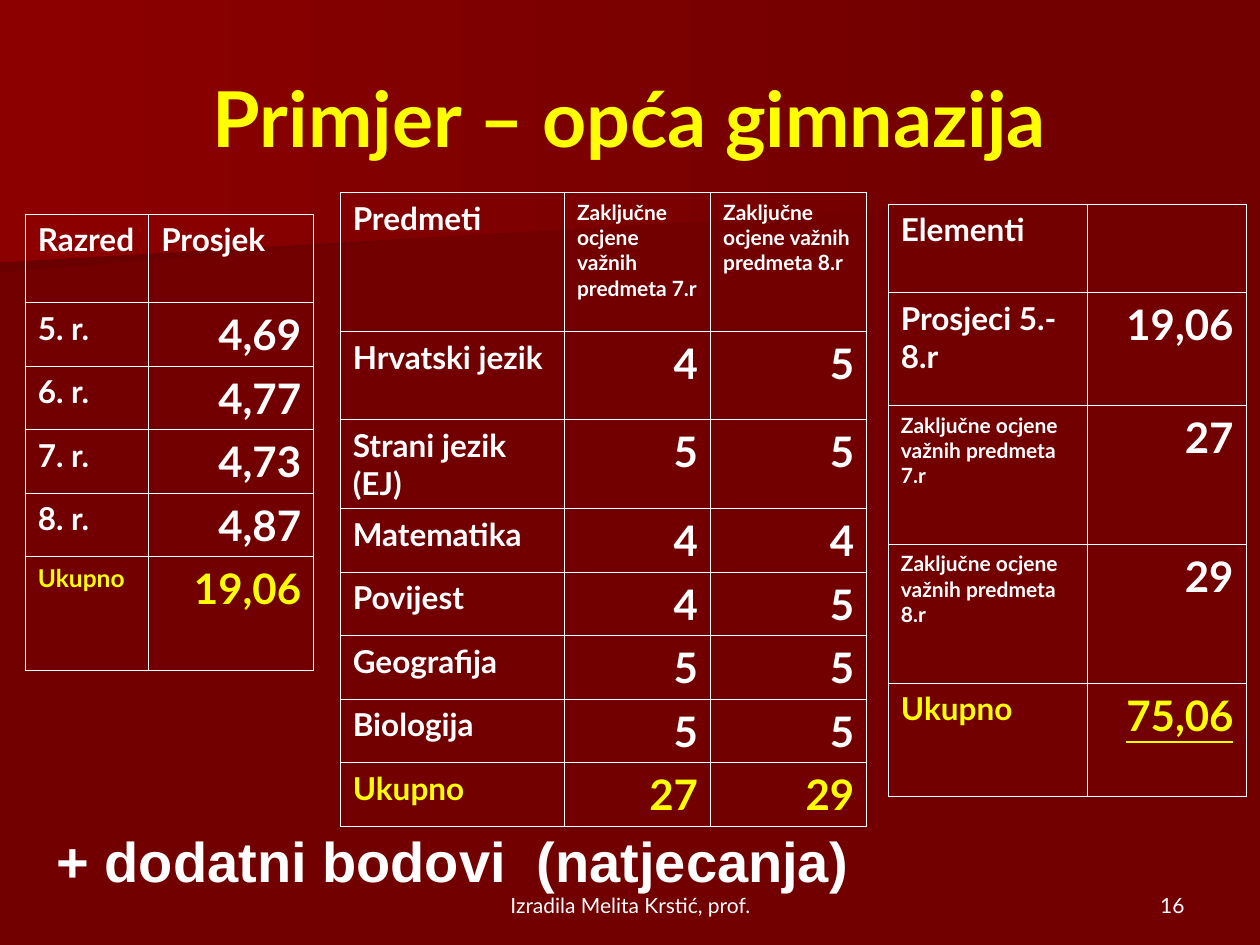
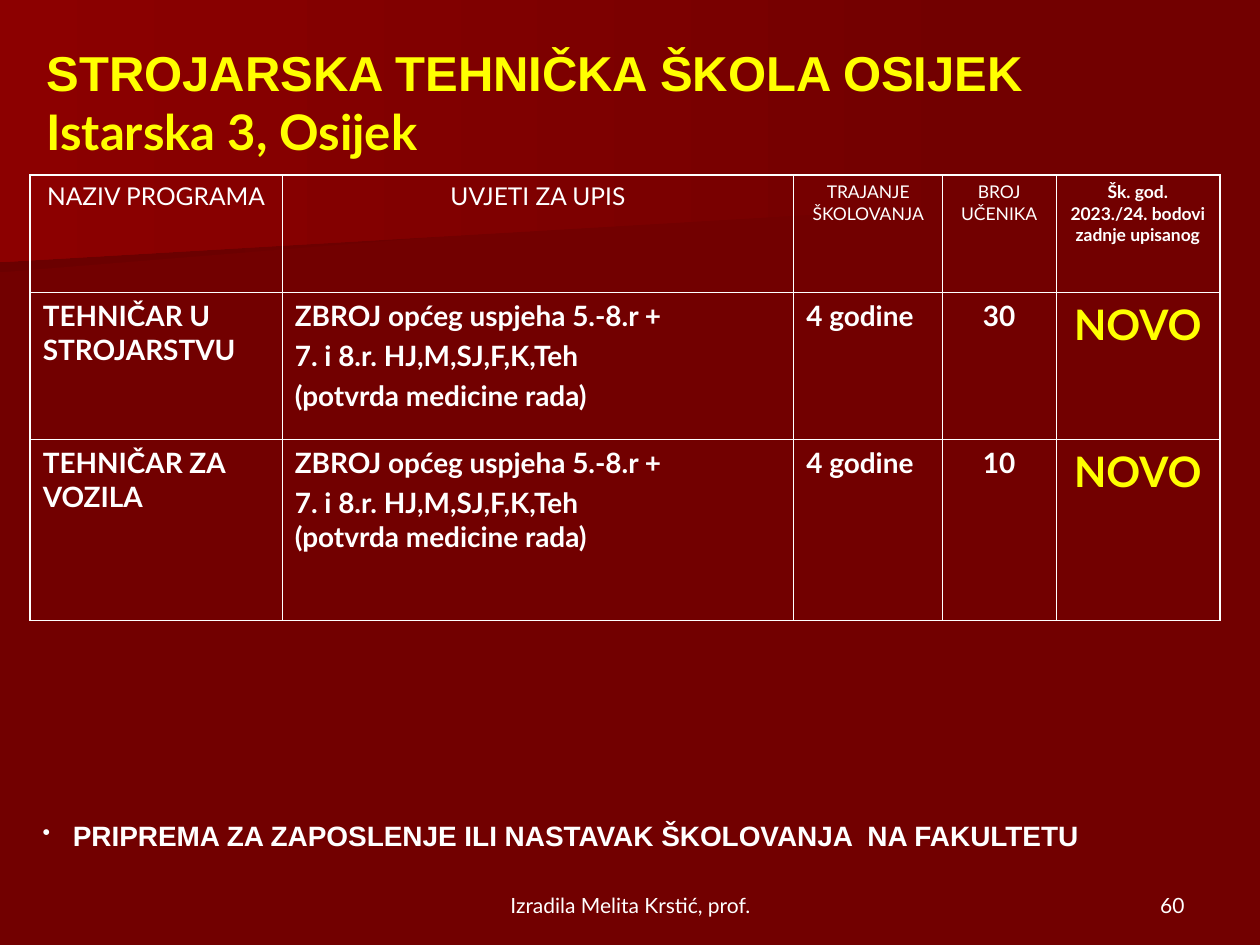
"""Builds two slides on enrolment points for Croatian secondary schools."""
from lxml import etree
from pptx import Presentation
from pptx.dml.color import RGBColor
from pptx.enum.text import MSO_ANCHOR, PP_ALIGN
from pptx.oxml.ns import qn
from pptx.util import Inches, Pt

LEFT, CENTER, RIGHT = PP_ALIGN.LEFT, PP_ALIGN.CENTER, PP_ALIGN.RIGHT
TOP, MIDDLE, BOTTOM = MSO_ANCHOR.TOP, MSO_ANCHOR.MIDDLE, MSO_ANCHOR.BOTTOM

COLORS = {
    "ground": "720000",
    "shade": "6B0000",
    "glow": "8C0000",
    "text": "FFFFFF",
    "accent": "FFFF00",
}
BODY_FONT, PLAIN_FONT = "Lato", "Arial"
THIN, THICK = 0.45, 1.08
BANDS = [
    ("shade", [(7.78, 1.53), (0, 2.16), (0, 1.01), (7.79, 1.01), (7.78, 1.28)]),
    ("glow", [(7.91, 1.62), (0, 2.08), (0, 0), (7.92, 0)]),
]
AUTHOR = "Izradila Melita Krstić, prof."


def rgb(name):
    return RGBColor.from_string(COLORS[name])


def write(frame, text, size=18, color="text", font=BODY_FONT, bold=False,
          underline=False, align=LEFT, spacing=1.0, gaps=None):
    """Append each line of text to the frame as a paragraph."""
    lines = text.split("\n")
    for line, gap in zip(lines, gaps or [0] * len(lines)):
        paragraph = frame.add_paragraph() if frame.text else frame.paragraphs[0]
        paragraph.alignment = align
        paragraph.line_spacing = spacing
        paragraph.space_before = Pt(gap)
        run = paragraph.add_run()
        run.text = line
        run.font.name = font
        run.font.size = Pt(size)
        run.font.bold = bold
        run.font.underline = underline
        run.font.color.rgb = rgb(color)


class Deck:
    """Holds the shared style and the slide being built."""

    def __init__(self):
        self.presentation = Presentation()
        self.presentation.slide_width = Inches(10)
        self.presentation.slide_height = Inches(7.5)
        ground = self.presentation.slide_master.background.fill
        ground.solid()
        ground.fore_color.rgb = rgb("ground")
        self.slide = None

    def start(self, number):
        layout = self.presentation.slide_layouts[5]
        self.slide = self.presentation.slides.add_slide(layout)
        for tone, corners in BANDS:
            self.band(tone, corners)
        footer = dict(size=12, anchor=BOTTOM)
        self.text((3.42, 6.83, 3.17, 0.5), AUTHOR, align=CENTER, **footer)
        self.text((7.17, 6.83, 2.33, 0.5), str(number), align=RIGHT, **footer)

    def band(self, tone, corners):
        points = [(Inches(x), Inches(y)) for x, y in corners]
        builder = self.slide.shapes.build_freeform(*points[0])
        builder.add_line_segments(points[1:], close=True)
        band = builder.convert_to_shape()
        band.shadow.inherit = False
        band.line.fill.background()
        band.fill.gradient()
        band.fill.gradient_angle = 180
        for stop, name in zip(band.fill.gradient_stops, ("ground", tone)):
            stop.color.rgb = rgb(name)
        self.slide.shapes.title.element.addprevious(band.element)

    def title(self, box, lines, size, align=LEFT):
        title = self.slide.shapes.title
        title.left, title.top, title.width, title.height = map(Inches, box)
        title.text_frame.word_wrap = True
        title.text_frame.vertical_anchor = MIDDLE
        for line, font in lines:
            write(title.text_frame, line, size=size, font=font, bold=True,
                  color="accent", align=align)

    def text(self, box, text, anchor=TOP, **style):
        frame = self.slide.shapes.add_textbox(*map(Inches, box)).text_frame
        frame.word_wrap = True
        frame.vertical_anchor = anchor
        write(frame, text, **style)
        return frame

    def bullet(self, box, text, **style):
        paragraph = self.text(box, text, **style).paragraphs[0]
        properties = paragraph.element.get_or_add_pPr() if hasattr(
            paragraph, "element") else paragraph._p.get_or_add_pPr()
        properties.set("marL", str(Inches(0.24)))
        properties.set("indent", str(-Inches(0.24)))
        tint = etree.SubElement(properties, qn("a:buClr"))
        etree.SubElement(tint, qn("a:srgbClr"), val=COLORS["text"])
        etree.SubElement(properties, qn("a:buSzPct"), val="80000")
        etree.SubElement(properties, qn("a:buChar"), char="•")

    def table(self, corner, widths, heights, rows, style, frame_width=THIN):
        box = (*corner, sum(widths), sum(heights))
        table = self.slide.shapes.add_table(
            len(heights), len(widths), *map(Inches, box)).table
        table.first_row = table.horz_banding = False
        for column, width in zip(table.columns, widths):
            column.width = Inches(width)
        for line, height in zip(table.rows, heights):
            line.height = Inches(height)
        for r, row in enumerate(rows):
            for c, text in enumerate(row):
                cell = table.cell(r, c)
                self.borders(cell, {
                    "L": THIN if c else frame_width,
                    "R": THIN if c < len(widths) - 1 else frame_width,
                    "T": THIN if r else frame_width,
                    "B": THIN,
                })
                cell.fill.background()
                if text:
                    write(cell.text_frame, text, spacing=1.01, **style(r, c, text))

    def borders(self, cell, widths):
        properties = cell._tc.get_or_add_tcPr()
        for side, width in widths.items():
            line = etree.SubElement(properties, qn(f"a:ln{side}"), w=str(Pt(width)))
            fill = etree.SubElement(line, qn("a:solidFill"))
            etree.SubElement(fill, qn("a:srgbClr"), val=COLORS["text"])


def points_style(total_row, total_size=18):
    """Return the cell format rule of a points table with a total row."""
    def style(row, column, text):
        is_value = row > 0 and column > 0
        is_total = row == total_row
        label_size = 12 if text.startswith("Zaključne") else 18
        if is_total:
            label_size = total_size
        return dict(
            size=24 if is_value else label_size,
            align=RIGHT if is_value else LEFT,
            color="accent" if is_total else "text",
            underline=text == "75,06",
            bold=True,
        )
    return style


def program_style(row, column, text):
    """Return the cell format of the school programme table."""
    if row == 0:
        return dict(size=14 if column < 2 else 10, bold=column == 4, align=CENTER)
    style = dict(size=16, bold=True, align=CENTER if column > 2 else LEFT)
    if column == 1:
        style["gaps"] = (0, 3.5, 3.5 if row == 1 else 0)
    if column == 4:
        style.update(size=24, color="accent")
    return style


def grammar_school(deck):
    grades_7 = "Zaključne ocjene važnih predmeta 7.r"
    grades_8 = "Zaključne ocjene važnih predmeta 8.r"
    averages = [
        ("Razred", "Prosjek"),
        ("5. r.", "4,69"),
        ("6. r.", "4,77"),
        ("7. r.", "4,73"),
        ("8. r.", "4,87"),
        ("Ukupno", "19,06"),
    ]
    subjects = [
        ("Predmeti", grades_7, grades_8),
        ("Hrvatski jezik", "4", "5"),
        ("Strani jezik (EJ)", "5", "5"),
        ("Matematika", "4", "4"),
        ("Povijest", "4", "5"),
        ("Geografija", "5", "5"),
        ("Biologija", "5", "5"),
        ("Ukupno", "27", "29"),
    ]
    elements = [
        ("Elementi", ""),
        ("Prosjeci 5.-8.r", "19,06"),
        (grades_7, "27"),
        (grades_8, "29"),
        ("Ukupno", "75,06"),
    ]
    deck.start(16)
    deck.title((0.5, 0.3, 9, 1.25), [("Primjer – opća gimnazija", BODY_FONT)],
               size=44, align=CENTER)
    deck.table((0.2, 1.7), [0.98, 1.31], [0.7] + [0.5] * 4 + [0.9],
               averages, points_style(5, total_size=14))
    deck.table((2.7, 1.53), [1.78, 1.16, 1.24], [1.1, 0.7, 0.7] + [0.5] * 5,
               subjects, points_style(7))
    deck.table((7.05, 1.62), [1.58, 1.26], [0.7, 0.9, 1.1, 1.1, 0.9],
               elements, points_style(4))
    deck.text((0.35, 6.51, 6.85, 0.64), "+ dodatni bodovi  (natjecanja)",
              size=32, font=PLAIN_FONT, bold=True)


def technical_school(deck):
    conditions = ("ZBROJ općeg uspjeha 5.-8.r +\n7. i 8.r. HJ,M,SJ,F,K,Teh\n"
                  "(potvrda medicine rada)")
    programs = [
        ("NAZIV PROGRAMA", "UVJETI ZA UPIS", "TRAJANJE ŠKOLOVANJA",
         "BROJ UČENIKA", "Šk. god. 2023./24. bodovi zadnje upisanog"),
        ("TEHNIČAR U STROJARSTVU", conditions, "4 godine", "30", "NOVO"),
        ("TEHNIČAR ZA VOZILA", conditions, "4 godine", "10", "NOVO"),
    ]
    deck.start(60)
    deck.title((0.27, 0.3, 9.23, 1.01),
               [("STROJARSKA TEHNIČKA ŠKOLA OSIJEK", PLAIN_FONT),
                ("Istarska 3, Osijek", BODY_FONT)], size=28)
    deck.table((0.24, 1.39), [2, 4.06, 1.18, 0.9, 1.3], [0.93, 1.17, 1.43],
               programs, program_style, frame_width=THICK)
    deck.bullet((0.24, 6.45, 9.53, 0.77),
                "PRIPREMA ZA ZAPOSLENJE ILI NASTAVAK ŠKOLOVANJA  NA FAKULTETU",
                size=16, font=PLAIN_FONT, bold=True)


def main():
    deck = Deck()
    grammar_school(deck)
    technical_school(deck)
    deck.presentation.save("out.pptx")


if __name__ == "__main__":
    main()
